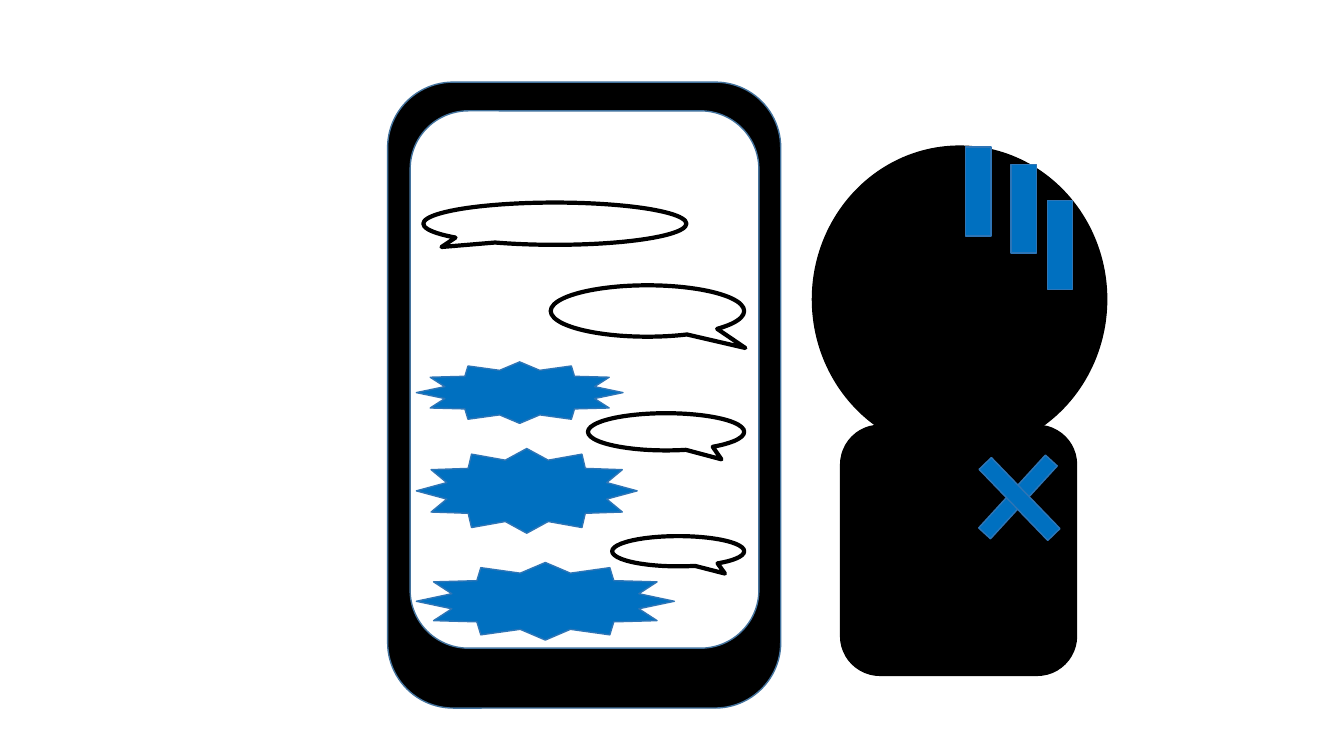
from pptx import Presentation
from pptx import util as u
from pptx.dml.color import RGBColor
from pptx.enum import shapes

BLACK, WHITE = "000000", "FFFFFF"
BLUE, BLUE_EDGE, PHONE_EDGE = "0070C0", "2E75B6", "43739E"
MSO = shapes.MSO_SHAPE


def color(hex_string):
    return RGBColor.from_string(hex_string)


class Drawing:
    """Current slide and its drawing style; all lengths are in points."""

    def __init__(self, slide):
        self.s = slide

    def shape(self, kind, box, fill, line, width=1, rotation=0, adjust=()):
        sp = self.s.shapes.add_shape(kind, *(u.Pt(v) for v in box))
        sp.shadow.inherit = False
        sp.rotation = rotation
        sp.fill.solid()
        sp.fill.fore_color.rgb = color(fill)
        sp.line.color.rgb = color(line)
        sp.line.width = u.Pt(width)
        for i, value in enumerate(adjust):
            sp.adjustments[i] = value
        return sp

    def rounded(self, box, fill, line, rotation=0):
        return self.shape(MSO.ROUNDED_RECTANGLE, box, fill, line, rotation=rotation)

    def circle(self, box):
        return self.shape(MSO.OVAL, box, BLACK, BLACK)

    def bubble(self, box, tail):
        return self.shape(MSO.OVAL_CALLOUT, box, WHITE, BLACK, width=3, adjust=tail)

    def burst(self, box):
        return self.shape(MSO.STAR_12_POINT, box, BLUE, BLUE_EDGE)

    def bar(self, box, rotation=0):
        return self.shape(MSO.RECTANGLE, box, BLUE, BLUE_EDGE, rotation=rotation)


def main():
    prs = Presentation()
    prs.slide_width, prs.slide_height = u.Pt(960), u.Pt(540)
    d = Drawing(prs.slides.add_slide(prs.slide_layouts[6]))

    # Person's body, phone case, person's head and phone screen
    d.rounded((600.5, 303.8, 168.5, 178.6), BLACK, BLACK)
    d.rounded((193.7, 141.8, 447.1, 280.8), BLACK, PHONE_EDGE, rotation=90)
    d.circle((580.3, 104.4, 210.2, 218.9))
    d.rounded((293, 79.2, 249.1, 383.8), WHITE, PHONE_EDGE)

    # Hostile messages, aligned left
    burst_left = 297.4
    for top, width, height in ((258.5, 147.6, 43.9),
                               (320.4, 157.7, 60.5),
                               (401.8, 184.3, 55.4)):
        d.burst((burst_left, top, width, height))

    # Incoming message, then replies aligned right
    d.bubble((302.4, 144.7, 187.9, 30.2), (-0.431, 0.551))
    reply_right = 531.6
    for top, width, height, tail in ((203.8, 138.2, 36.7, (0.506, 0.72)),
                                     (295.2, 111.6, 26.6, (0.354, 0.738)),
                                     (383, 94.3, 21.6, (0.354, 0.738))):
        d.bubble((reply_right - width, top, width, height), tail)

    # Gloom lines on the head
    for left, top in ((689.8, 105.1), (722.2, 117.4), (748.1, 143.3)):
        d.bar((left, top, 18, 63.4))

    # Cross on the chest
    d.bar((721.4, 319.7, 11.5, 70.6), rotation=42.5)
    d.bar((722.2, 321.1, 12.2, 70.6), rotation=316)

    prs.save("out.pptx")


if __name__ == "__main__":
    main()
